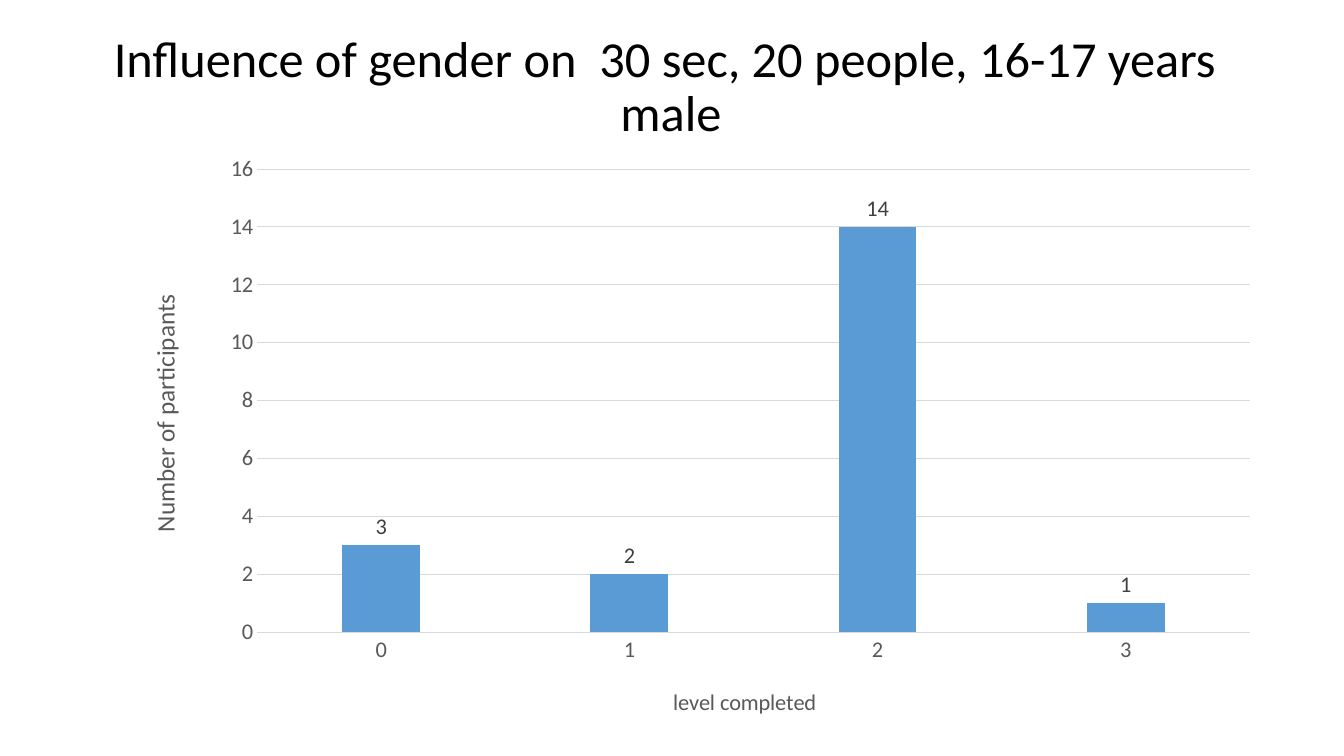
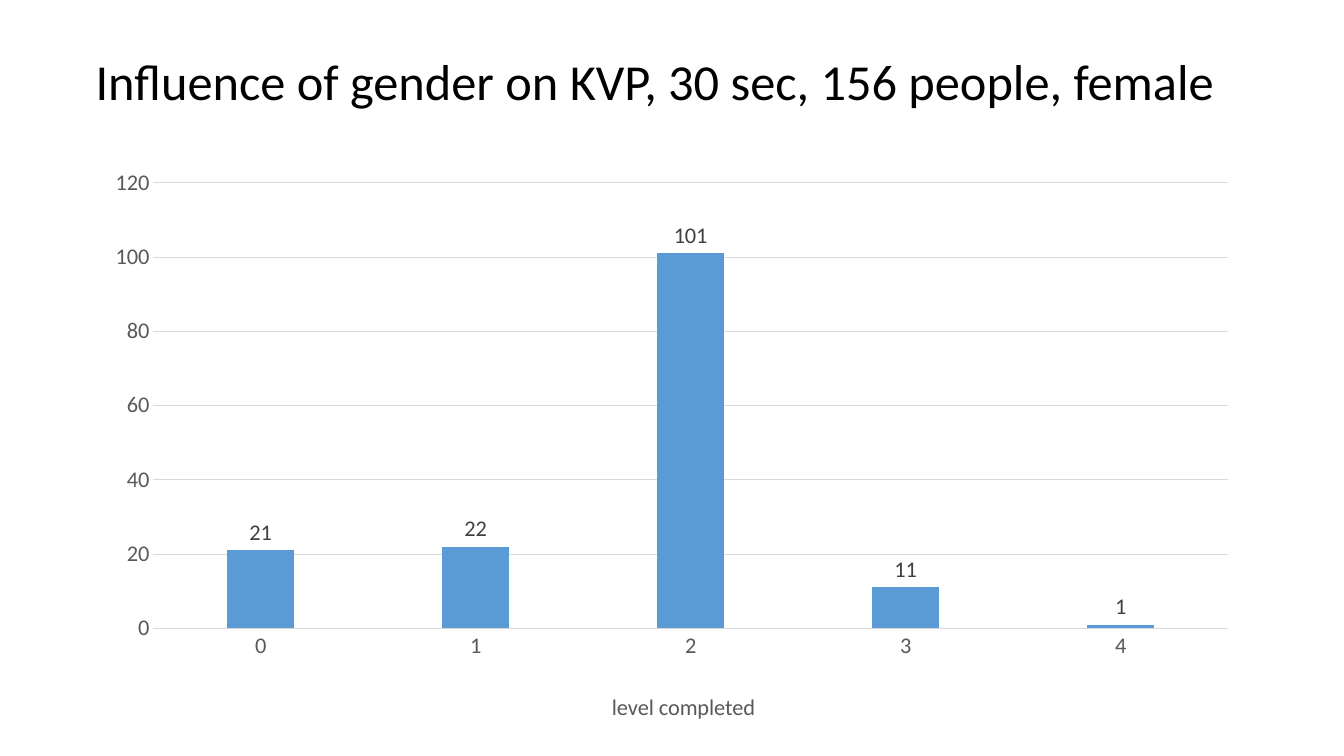
"""Build two slides comparing completed levels by gender."""
from dataclasses import dataclass
from typing import Optional

from lxml.etree import SubElement
from pptx import Presentation
from pptx.chart.axis import AxisTitle
from pptx.chart.data import CategoryChartData
from pptx.dml.color import RGBColor
from pptx.enum.chart import XL_CHART_TYPE, XL_LABEL_POSITION, XL_TICK_MARK
from pptx.enum.text import MSO_ANCHOR, MSO_AUTO_SIZE, PP_ALIGN
from pptx.oxml.ns import qn
from pptx.slide import Slide
from pptx.text.text import Font
from pptx.util import Cm, Pt

FONT = "Calibri"
BLACK = RGBColor(0x00, 0x00, 0x00)
AXIS_GREY = RGBColor(0x59, 0x59, 0x59)
LABEL_GREY = RGBColor(0x40, 0x40, 0x40)
GRID_GREY = RGBColor(0xD9, 0xD9, 0xD9)
BAR_BLUE = RGBColor(0x5B, 0x9B, 0xD5)


@dataclass(frozen=True)
class Box:
    """A rectangle on the slide, in centimetres."""
    left: float
    top: float
    width: float = 0
    height: float = 0


@dataclass(frozen=True)
class ChartSlide:
    """The content and layout of one chart slide."""
    title: str
    title_box: Box
    chart_box: Box
    plot_box: Box
    values: tuple[int, ...]
    top_value: int
    step: int
    level_title: Box
    count_title: Optional[Box] = None


SLIDES = (
    ChartSlide(
        title="Influence of gender on  30 sec, 20 people, 16-17 years \vmale",
        title_box=Box(1.57, 0.38, 30.68, 3.68),
        chart_box=Box(2.87, 3.63, 29.21, 14.83),
        plot_box=Box(6.48, 4.26, 25.02, 11.67),
        values=(3, 2, 14, 1), top_value=16, step=2,
        level_title=Box(16.86, 17.2), count_title=Box(3.6, 7.3)),
    ChartSlide(
        title="Influence of gender on KVP, 30 sec, 156 people, female",
        title_box=Box(1.17, 0.28, 30.68, 3.68),
        chart_box=Box(2.34, 3.96, 29.21, 14.4),
        plot_box=Box(3.86, 4.61, 27.09, 11.24),
        values=(21, 22, 101, 11, 1), top_value=120, step=20,
        level_title=Box(15.32, 17.35)),
)


def style_font(font: Font, size: int, color: RGBColor) -> None:
    """Apply the shared typeface with a size and colour."""
    font.name = FONT
    font.size = Pt(size)
    font.bold = False
    font.color.rgb = color


def set_layout(parent, index: int, box: Box, chart_box: Box) -> None:
    """Place a chart part at a slide position."""
    for old in parent.findall(qn("c:layout")):
        parent.remove(old)
    layout = parent.makeelement(qn("c:layout"))
    parent.insert(index, layout)
    manual = SubElement(layout, qn("c:manualLayout"))
    settings = {"xMode": "edge", "yMode": "edge",
                "x": (box.left - chart_box.left) / chart_box.width,
                "y": (box.top - chart_box.top) / chart_box.height}
    if box.width:
        settings = {"layoutTarget": "inner", **settings,
                    "w": box.width / chart_box.width,
                    "h": box.height / chart_box.height}
    for tag, value in settings.items():
        SubElement(manual, qn(f"c:{tag}")).set("val", str(value))


def add_axis_title(title: AxisTitle, text: str, size: int, box: Box,
                   chart_box: Box, rotation: int = 0) -> None:
    """Write, format and place an axis title."""
    tf = title.text_frame
    tf.text = text
    style_font(tf.paragraphs[0].runs[0].font, size, AXIS_GREY)
    title._element.find(".//" + qn("a:bodyPr")).set("rot", str(rotation * 60000))
    set_layout(title._element, 1, box, chart_box)


def add_title(s: Slide, text: str, box: Box) -> None:
    """Fill and format the title placeholder."""
    sp = s.shapes.title
    sp.left, sp.top = Cm(box.left), Cm(box.top)
    sp.width, sp.height = Cm(box.width), Cm(box.height)
    tf = sp.text_frame
    tf.text = text
    tf.word_wrap = True
    tf.auto_size = MSO_AUTO_SIZE.NONE
    tf.vertical_anchor = MSO_ANCHOR.MIDDLE
    p = tf.paragraphs[0]
    p.alignment = PP_ALIGN.CENTER
    p.line_spacing = 0.9
    for r in p.runs:
        style_font(r.font, 36, BLACK)


def add_column_chart(s: Slide, spec: ChartSlide) -> None:
    """Draw the participants reaching each level."""
    data = CategoryChartData()
    data.categories = [str(level) for level in range(len(spec.values))]
    data.add_series("Series 1", spec.values)
    box = spec.chart_box
    chart = s.shapes.add_chart(
        XL_CHART_TYPE.COLUMN_CLUSTERED, Cm(box.left), Cm(box.top),
        Cm(box.width), Cm(box.height), data).chart
    style_font(chart.font, 16, BLACK)
    chart.has_legend = False
    chart.has_title = False

    levels, counts = chart.category_axis, chart.value_axis
    for axis in (levels, counts):
        axis.major_tick_mark = axis.minor_tick_mark = XL_TICK_MARK.NONE
        style_font(axis.tick_labels.font, 16, AXIS_GREY)
    counts.minimum_scale, counts.maximum_scale = 0, spec.top_value
    counts.major_unit = spec.step
    counts.has_major_gridlines = True
    counts.format.line.fill.background()
    for line in (levels.format.line, counts.major_gridlines.format.line):
        line.color.rgb = GRID_GREY
        line.width = Pt(0.75)

    add_axis_title(levels.axis_title, "level completed", 16, spec.level_title, box)
    if spec.count_title:
        add_axis_title(counts.axis_title, "Number of participants", 18,
                       spec.count_title, box, -90)

    plot = chart.plots[0]
    plot.gap_width, plot.overlap = 219, -27
    plot.vary_by_categories = False
    fill = plot.series[0].format.fill
    fill.solid()
    fill.fore_color.rgb = BAR_BLUE
    plot.has_data_labels = True
    labels = plot.data_labels
    labels.show_value = True
    labels.position = XL_LABEL_POSITION.OUTSIDE_END
    style_font(labels.font, 16, LABEL_GREY)
    set_layout(chart._chartSpace.find(".//" + qn("c:plotArea")), 0,
               spec.plot_box, box)


def main() -> None:
    """Create and save the presentation."""
    prs = Presentation()
    prs.slide_width, prs.slide_height = Cm(33.87), Cm(19.05)
    for spec in SLIDES:
        s = prs.slides.add_slide(prs.slide_layouts.get_by_name("Title Only"))
        add_title(s, spec.title, spec.title_box)
        add_column_chart(s, spec)
    prs.save("out.pptx")


if __name__ == "__main__":
    main()
